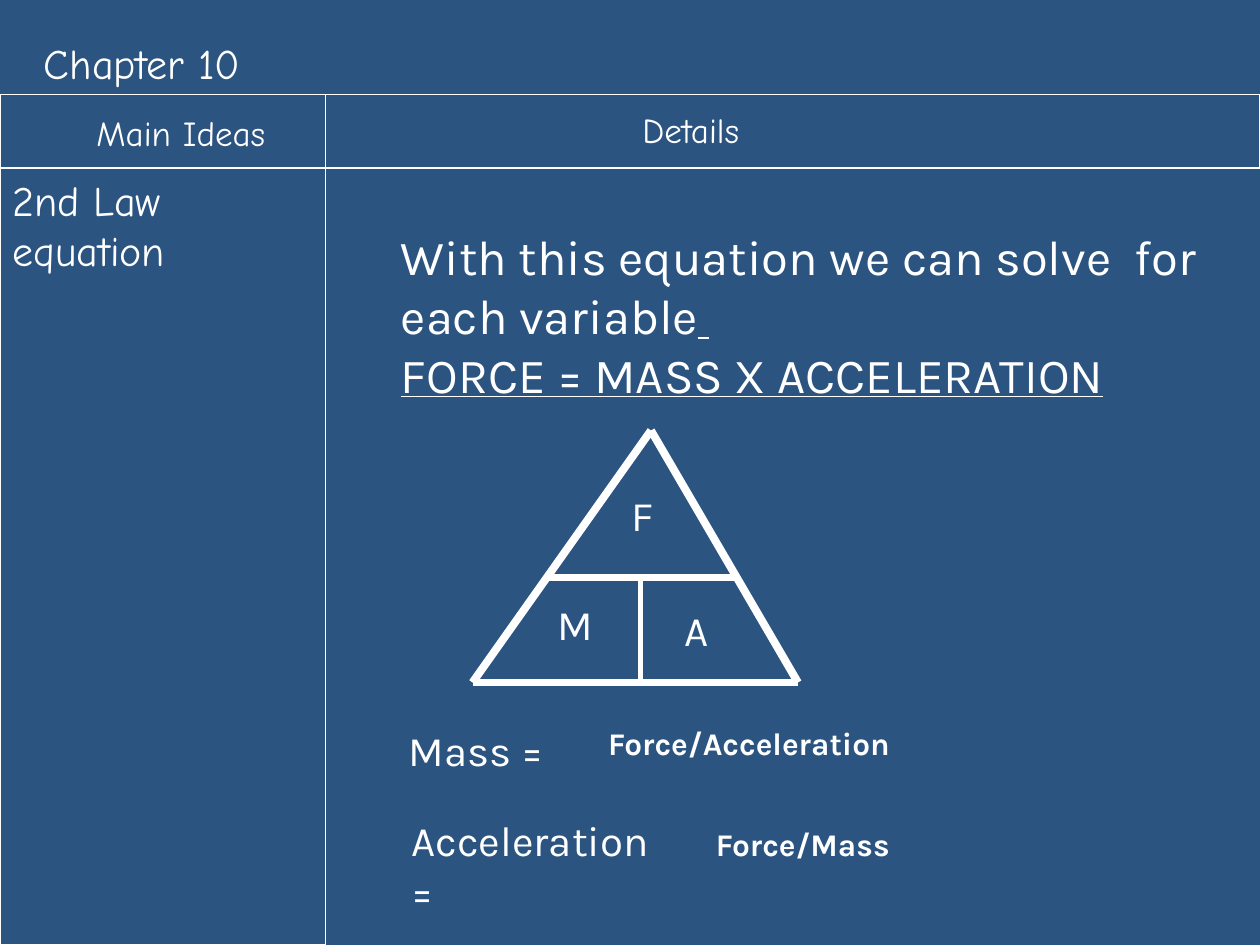
import pptx
import pptx.dml.color
import pptx.enum.shapes
import pptx.enum.text
import pptx.util
from dataclasses import dataclass
from lxml import etree

EMU_PER_PX = 914400 // 96
EFFECTS = "{http://schemas.openxmlformats.org/drawingml/2006/main}effectLst"


@dataclass(frozen=True)
class Theme:
    background: str = "2B5481"
    ink: str = "FFFFFF"
    note_font: str = "Comic Neue"
    body_font: str = "Karla"
    statement: int = 28
    title: int = 24
    heading: int = 20
    answer: int = 18
    hairline: float = 0.75
    divider: float = 3
    edge: float = 4.5


def px(value):
    return pptx.util.Emu(value * EMU_PER_PX)


def color(code):
    return pptx.dml.color.RGBColor.from_string(code)


class Sheet:
    def __init__(self, page, theme):
        self.page = page
        self.theme = theme
        fill = page.background.fill
        fill.solid()
        fill.fore_color.rgb = color(theme.background)

    def text(self, area, paragraphs, size, font, wrap=False, bold=False):
        """Each paragraph is a list of (words, underlined) spans."""
        box = self.page.shapes.add_textbox(*map(px, area))
        frame = box.text_frame
        frame.word_wrap = wrap
        frame.auto_size = pptx.enum.text.MSO_AUTO_SIZE.SHAPE_TO_FIT_TEXT
        for index, spans in enumerate(paragraphs):
            para = frame.add_paragraph() if index else frame.paragraphs[0]
            for words, underlined in spans:
                span = para.add_run()
                span.text = words
                span.font.name = font
                span.font.size = pptx.util.Pt(size)
                span.font.bold = bold
                span.font.underline = underlined
                span.font.color.rgb = color(self.theme.ink)

    def label(self, area, words, size, font, **options):
        self.text(area, [[(words, False)]], size, font, **options)

    def stroke(self, shape, weight):
        shape.line.color.rgb = color(self.theme.ink)
        shape.line.width = pptx.util.Pt(weight)

    def frame(self, area):
        kind = pptx.enum.shapes.MSO_SHAPE.RECTANGLE
        shape = self.page.shapes.add_shape(kind, *map(px, area))
        shape.shadow.inherit = False
        shape.fill.background()
        self.stroke(shape, self.theme.hairline)

    def line(self, start, end, weight):
        kind = pptx.enum.shapes.MSO_CONNECTOR.STRAIGHT
        shape = self.page.shapes.add_connector(kind, *map(px, start + end))
        self.stroke(shape, weight)
        etree.SubElement(shape._element.spPr, EFFECTS)


def main():
    theme = Theme()
    deck = pptx.Presentation()
    deck.slide_width, deck.slide_height = px(960), px(720)
    sheet = Sheet(deck.slides.add_slide(deck.slide_layouts[6]), theme)
    note, body = theme.note_font, theme.body_font

    # Notebook grid
    sheet.label((24, 24, 936, 48), "Chapter 10", theme.title, note, wrap=True)
    sheet.label((64, 80, 157, 47), "Main Ideas", theme.heading, note)
    sheet.label((480, 78, 108, 47), "Details", theme.heading, note)
    sheet.frame((0, 72, 960, 56))
    sheet.frame((0, 128, 248, 592))
    sheet.line((248, 128), (248, 72), theme.hairline)
    sheet.label((0, 128, 240, 86), "2nd Law equation", theme.title, note, wrap=True)

    sheet.text(
        (296, 168, 640, 173),
        [
            [("With this equation we can solve  for each variable", False), (" ", True)],
            [("FORCE = MASS X ACCELERATION", True)],
        ],
        theme.statement, body, wrap=True,
    )

    # Formula triangle
    apex, left, right = (496, 328), (360, 520), (608, 520)
    for start, end in ((left, apex), (right, apex), (left, right), ((416, 440), (560, 440))):
        sheet.line(start, end, theme.edge)
    sheet.line((488, 440), (488, 520), theme.divider)
    for area, letter in (
        ((472, 368, 36, 48), "F"),
        ((415, 451, 44, 48), "M"),
        ((512, 456, 38, 48), "A"),
    ):
        sheet.label(area, letter, theme.title, body)

    # Solved variables
    sheet.label((302, 547, 123, 48), "Mass =", theme.title, body)
    sheet.label((304, 616, 216, 86), "Acceleration =", theme.title, body, wrap=True)
    sheet.label((454, 547, 249, 38), "Force/Acceleration", theme.answer, body, bold=True)
    sheet.label((536, 624, 159, 38), "Force/Mass", theme.answer, body, bold=True)

    deck.save("out.pptx")


if __name__ == "__main__":
    main()
